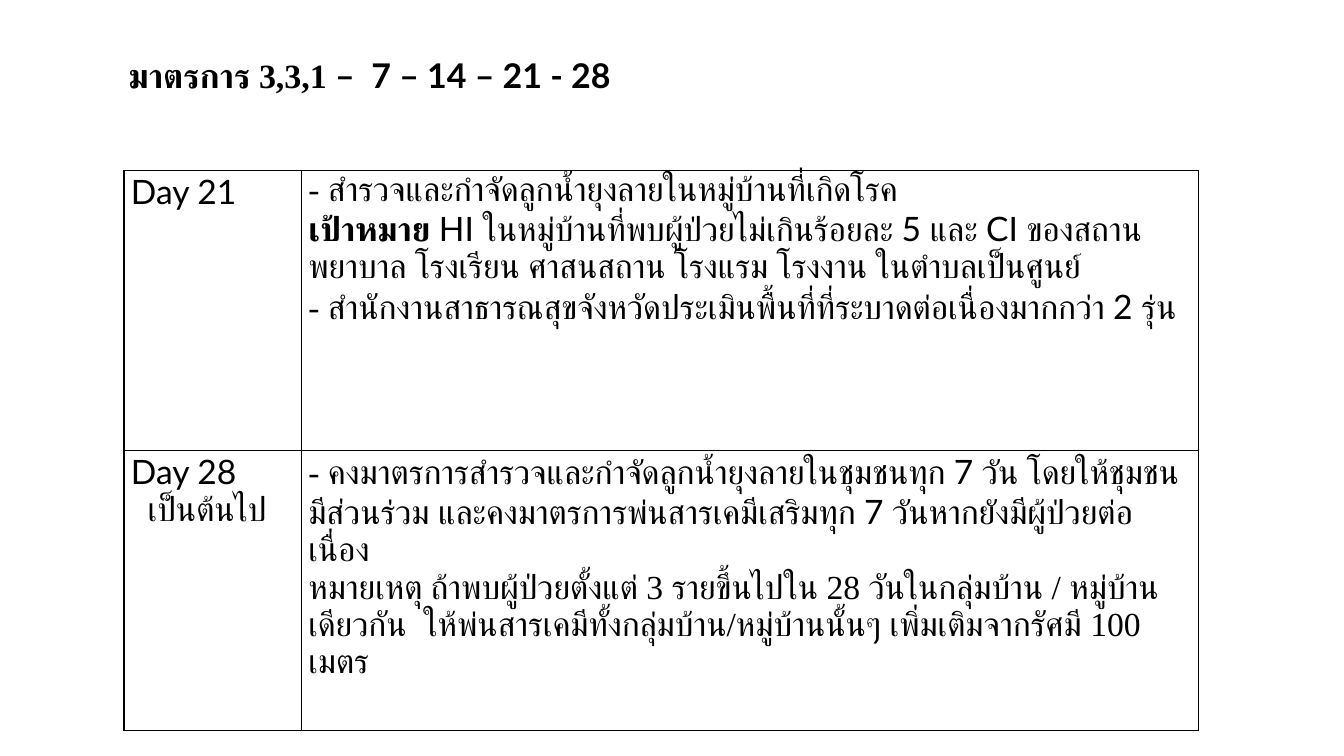
from dataclasses import dataclass

import pptx
import pptx.dml.color
import pptx.enum.text
import pptx.oxml
import pptx.oxml.ns
import pptx.util

Pt = pptx.util.Pt
BLACK = pptx.dml.color.RGBColor(0, 0, 0)
SERIF = "Times New Roman"
SANS = "Lato"
BORDER_SIDES = ("a:lnL", "a:lnR", "a:lnT", "a:lnB")
BORDER_WIDTH = Pt(1)
COLUMN_WIDTHS = (126.72, 640.8)
ROW_HEIGHT = 200
BODY_SIZE = 24
TITLE_SIZE = 24.3


@dataclass(frozen=True)
class Span:
    text: str
    font: str = SERIF
    bold: bool = False


@dataclass(frozen=True)
class Para:
    spans: tuple[Span, ...]
    indent: float = 0


TITLE = Para((
    Span("มาตรการ 3,3,1", SERIF, True),
    Span(" –  7 – 14 – 21 - 28", SANS, True),
))

MEASURES = (
    (
        (Para((Span("Day 21", SANS),)),),
        (
            Para((Span("- สำรวจและกำจัดลูกน้ำยุงลายในหมู่บ้านที่เกิดโรค"),)),
            Para((
                Span("เป้าหมาย ", bold=True),
                Span("HI ในหมู่บ้านที่พบผู้ป่วยไม่เกินร้อยละ 5 และ CI ของสถานพยาบาล "
                     "โรงเรียน ศาสนสถาน โรงแรม โรงงาน ในตำบลเป็นศูนย์", SANS),
            )),
            Para((
                Span("- สำนักงานสาธารณสุขจังหวัดประเมินพื้นที่ที่ระบาดต่อเนื่องมากกว่า "),
                Span("2 รุ่น", SANS),
            )),
        ),
    ),
    (
        (
            Para((Span("Day 28", SANS),)),
            Para((Span("เป็นต้นไป", SANS),), indent=12),
        ),
        (
            Para((
                Span("- คงมาตรการสำรวจและกำจัดลูกน้ำยุงลายในชุมชนทุก "),
                Span("7 วัน โดยให้ชุมชนมีส่วนร่วม และคงมาตรการพ่นสารเคมีเสริมทุก "
                     "7 วันหากยังมีผู้ป่วยต่อเนื่อง", SANS),
            )),
            Para((
                Span("หมายเหตุ ถ้าพบผู้ป่วยตั้งแต่ 3 รายขึ้นไปใน 28 วันในกลุ่มบ้าน / "
                     "หมู่บ้านเดียวกัน  ให้พ่นสารเคมีทั้งกลุ่มบ้าน/หมู่บ้านนั้นๆ "
                     "เพิ่มเติมจากรัศมี 100 เมตร"),
            )),
        ),
    ),
)


def set_values(target: object, values: dict[str, object]) -> None:
    for name, value in values.items():
        setattr(target, name, value)


def write_paragraphs(frame: pptx.text.text.TextFrame, paras: tuple[Para, ...],
                     size: float) -> None:
    for index, para in enumerate(paras):
        paragraph = frame.add_paragraph() if index else frame.paragraphs[0]
        if para.indent:
            paragraph._p.get_or_add_pPr().set("marL", str(Pt(para.indent)))
        for span in para.spans:
            run = paragraph.add_run()
            run.text = span.text
            set_values(run.font, {"name": span.font, "size": Pt(size), "bold": span.bold})
            run.font.color.rgb = BLACK
            # Thai letters take the complex-script typeface.
            complex_font = pptx.oxml.parse_xml(
                f'<a:cs {pptx.oxml.ns.nsdecls("a")} typeface="{SERIF}"/>')
            run._r.get_or_add_rPr().append(complex_font)


def add_borders(cell: pptx.table._Cell) -> None:
    properties = cell._tc.get_or_add_tcPr()
    for index, side in enumerate(BORDER_SIDES):
        border = pptx.oxml.parse_xml(
            f'<{side} {pptx.oxml.ns.nsdecls("a")} w="{BORDER_WIDTH}"><a:solidFill>'
            f'<a:srgbClr val="{BLACK}"/></a:solidFill></{side}>')
        properties.insert(index, border)


def add_title(page: pptx.slide.Slide) -> None:
    box = page.shapes.add_textbox(Pt(85), Pt(53.28), Pt(808.56), Pt(45.36))
    set_values(box.text_frame, {
        "word_wrap": True,
        "vertical_anchor": pptx.enum.text.MSO_ANCHOR.BOTTOM,
        "margin_top": 0,
        "margin_bottom": Pt(34),
    })
    write_paragraphs(box.text_frame, (TITLE,), TITLE_SIZE)
    box.text_frame.paragraphs[0].line_spacing = 0.9


def add_measures_table(page: pptx.slide.Slide) -> None:
    table = page.shapes.add_table(
        len(MEASURES), len(COLUMN_WIDTHS), Pt(88.56), Pt(121.68),
        Pt(sum(COLUMN_WIDTHS)), Pt(ROW_HEIGHT * len(MEASURES))).table
    set_values(table, {"first_row": False, "horz_banding": False})
    for column, width in zip(table.columns, COLUMN_WIDTHS):
        column.width = Pt(width)
    for row, measure in zip(table.rows, MEASURES):
        row.height = Pt(ROW_HEIGHT)
        for cell, paras in zip(row.cells, measure):
            set_values(cell, {
                "margin_left": Pt(5), "margin_right": Pt(5),
                "margin_top": Pt(0.7), "margin_bottom": 0,
            })
            cell.fill.background()
            add_borders(cell)
            write_paragraphs(cell.text_frame, paras, BODY_SIZE)


def main() -> None:
    deck = pptx.Presentation()
    set_values(deck, {"slide_width": Pt(960), "slide_height": Pt(540)})
    page = deck.slides.add_slide(deck.slide_layouts[6])
    add_title(page)
    add_measures_table(page)
    deck.save("out.pptx")


if __name__ == "__main__":
    main()
